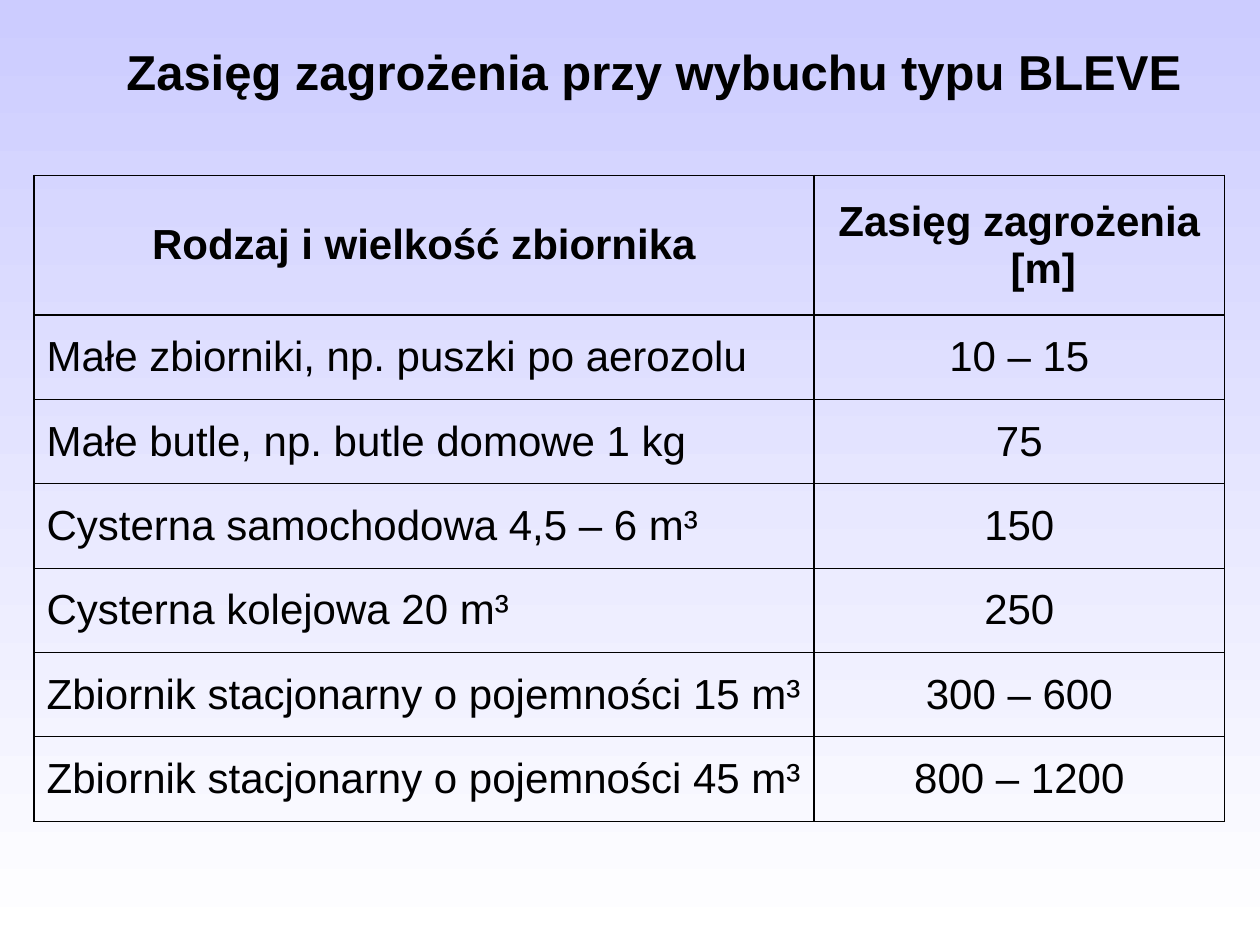
import pptx
import pptx.util
import pptx.dml.color
import pptx.enum.text
import lxml.etree as tree
from pptx.oxml.ns import qn

Inches = pptx.util.Inches
Pt = pptx.util.Pt
RGB = pptx.dml.color.RGBColor
Align = pptx.enum.text.PP_ALIGN
Anchor = pptx.enum.text.MSO_ANCHOR

BLACK = RGB(0x00, 0x00, 0x00)
LILAC = RGB(0xCC, 0xCC, 0xFF)
WHITE = RGB(0xFF, 0xFF, 0xFF)

TITLE = "Zasięg zagrożenia przy wybuchu typu BLEVE"
ROWS = [
    ("Rodzaj i wielkość zbiornika", "Zasięg zagrożenia [m]"),
    ("Małe zbiorniki, np. puszki po aerozolu", "10 – 15"),
    ("Małe butle, np. butle domowe 1 kg", "75"),
    ("Cysterna samochodowa 4,5 – 6 m³", "150"),
    ("Cysterna kolejowa 20 m³", "250"),
    ("Zbiornik stacjonarny o pojemności 15 m³", "300 – 600"),
    ("Zbiornik stacjonarny o pojemności 45 m³", "800 – 1200"),
]


class Deck:
    font = "Arial"
    inset = 0.38

    def __init__(self):
        self.file = pptx.Presentation()
        self.file.slide_width = Inches(10)
        self.file.slide_height = Inches(7.5)
        self.slide = self.file.slides.add_slide(self.file.slide_layouts[5])

    def shade(self, top, base):
        fill = self.slide.background.fill
        fill.gradient()
        fill.gradient_angle = 270
        for stop, color, place in zip(fill.gradient_stops, (top, base), (0, 1)):
            stop.color.rgb = color
            stop.position = place

    def label(self, para, text, size, bold, align, first):
        para.alignment = align
        props = para._p.get_or_add_pPr()
        props.set("marL", str(Inches(self.inset)))
        props.set("indent", str(Inches(first)))
        run = para.add_run()
        run.text = text
        run.font.name = self.font
        run.font.size = Pt(size)
        run.font.bold = bold
        run.font.color.rgb = BLACK

    def title(self, text, left, top, width, height):
        shape = self.slide.shapes.title
        shape.left, shape.top = Inches(left), Inches(top)
        shape.width, shape.height = Inches(width), Inches(height)
        frame = shape.text_frame
        frame.word_wrap = True
        frame.auto_size = pptx.enum.text.MSO_AUTO_SIZE.NONE
        frame.vertical_anchor = Anchor.TOP
        para = frame.paragraphs[0]
        para.line_spacing = 0.9
        self.label(para, text, 28, True, Align.CENTER, 0)

    def border(self, cell):
        props = cell._tc.get_or_add_tcPr()
        for side in ("a:lnL", "a:lnR", "a:lnT", "a:lnB"):
            line = tree.SubElement(props, qn(side), w=str(Pt(0.75)))
            fill = tree.SubElement(line, qn("a:solidFill"))
            tree.SubElement(fill, qn("a:srgbClr"), val=str(BLACK))

    def table(self, rows, left, top, wide, high):
        frame = self.slide.shapes.add_table(
            len(rows), len(wide), Inches(left), Inches(top),
            Inches(sum(wide)), Inches(sum(high)))
        grid = frame.table
        grid.first_row = grid.horz_banding = False
        for col, width in zip(grid.columns, wide):
            col.width = Inches(width)
        for i, (row, height) in enumerate(zip(rows, high)):
            grid.rows[i].height = Inches(height)
            for j, text in enumerate(row):
                cell = grid.cell(i, j)
                cell.vertical_anchor = Anchor.MIDDLE
                self.border(cell)
                cell.fill.background()
                head = i == 0
                align = Align.CENTER if head or j else Align.JUSTIFY
                para = cell.text_frame.paragraphs[0]
                self.label(para, text, 24, head, align, -self.inset)


def main():
    deck = Deck()
    deck.shade(LILAC, WHITE)
    deck.title(TITLE, 0, 0.33, 10, 0.55)
    deck.table(ROWS, 0.27, 1.39, [6.19, 3.26], [1.11] + [0.67] * 6)
    deck.file.save("out.pptx")


if __name__ == "__main__":
    main()
